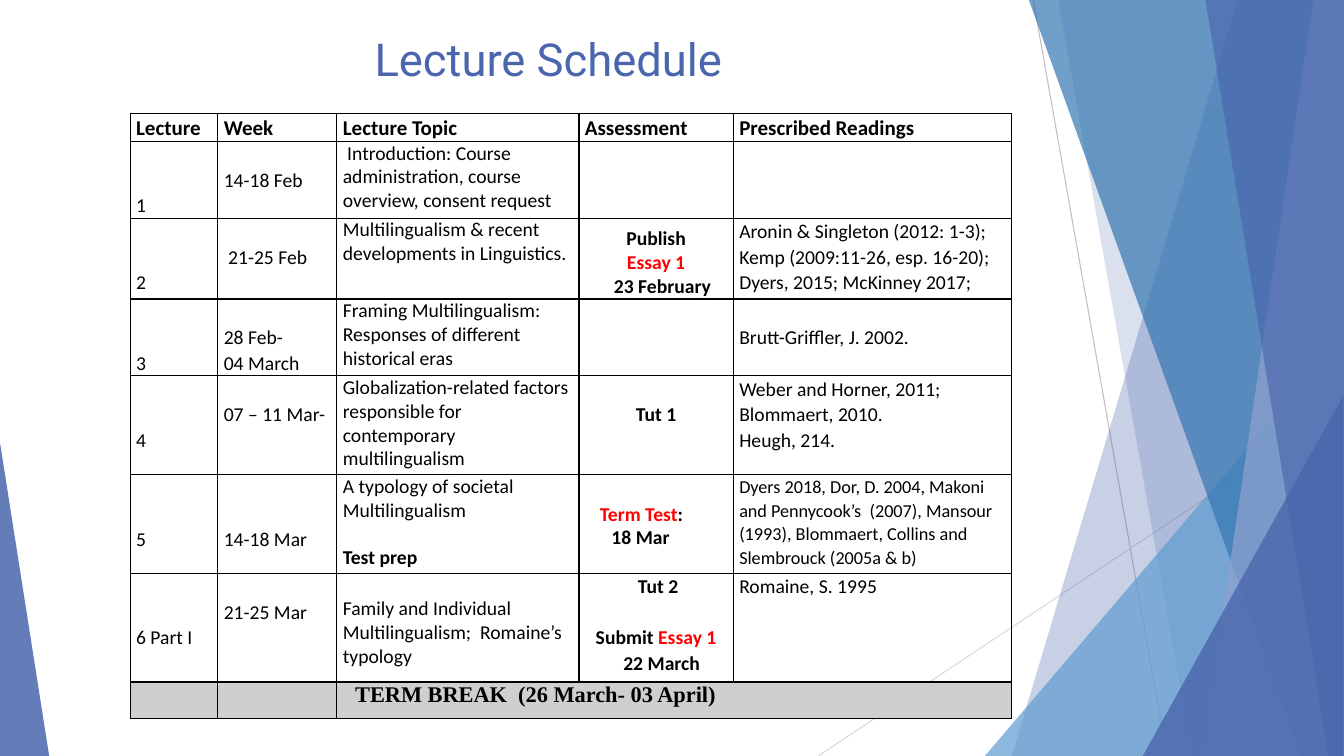
import pptx
import pptx.dml.color
import pptx.enum.shapes
import pptx.enum.text
import pptx.oxml
import pptx.oxml.ns
import pptx.util
from lxml import etree

Cm = pptx.util.Cm
Pt = pptx.util.Pt
qn = pptx.oxml.ns.qn
CENTER = pptx.enum.text.PP_ALIGN.CENTER
BLUE, BLACK, RED, GREY = "4A66AC", "000000", "FF0000", "D0CECE"
LINE = 18.3  # height in points of one 14 pt line at 1.07 spacing


def rgb(value):
    return pptx.dml.color.RGBColor.from_string(value)


def write(para, text, size=14, font="Calibri", color=BLACK, bold=False,
          align=None, spacing=1.07, indent=0, before=0):
    """Fill a paragraph; parts between asterisks turn red."""
    para.alignment = align
    para.line_spacing = spacing
    para.space_before = Pt(before)
    if indent:
        para._p.get_or_add_pPr().set("marL", str(Cm(indent)))
    for index, part in enumerate(text.split("*")):
        if part:
            span = para.add_run()
            span.text = part
            span.font.size = Pt(size)
            span.font.name = font
            span.font.bold = bold
            span.font.color.rgb = rgb(RED if index % 2 else color)


deck = pptx.Presentation()
deck.slide_width, deck.slide_height = Cm(33.87), Cm(19.05)
page = deck.slides.add_slide(deck.slide_layouts[5])
shapes = page.shapes

# Thin lines behind the facets
for x1, y1, x2, y2, color in [(26.04, 0, 29.41, 19.05, "BFBFBF"),
                              (33.87, 10.24, 20.62, 19.05, "D9D9D9")]:
    line = shapes.add_connector(pptx.enum.shapes.MSO_CONNECTOR.STRAIGHT,
                                Cm(x1), Cm(y1), Cm(x2), Cm(y2))
    line.line.color.rgb = rgb(color)
    line.line.width = Pt(0.75)
    etree.SubElement(line._element.spPr, qn("a:effectLst"))

# Facets: bands give top and bottom x of the left edge and run to the right
# page edge; triangles give left, top, width, height and apex position
facets = [
    ((31.19, 25.5), BLUE, 30),
    ((26.67, 30.05), BLUE, 20),
    ((24.82, 8.46, 9.04, 10.59, 1), "629DD1", 72),
    ((25.93, 32.79), "3477B2", 70),
    ((33.1, 30.28), "90A2CF", 70),
    ((30.38, 33.48), BLUE, 65),
    ((28.8, 9.98, 5.05, 9.07, 1), BLUE, 80),
    ((0, 11.15, 1.24, 7.9, 0), BLUE, 85),
]
for outline, color, opacity in facets:
    if len(outline) == 2:
        top_x, bottom_x = outline
        builder = shapes.build_freeform(Cm(top_x), 0)
        builder.add_line_segments([(Cm(33.87), 0), (Cm(33.87), Cm(19.05)),
                                   (Cm(bottom_x), Cm(19.05))], close=True)
        facet = builder.convert_to_shape()
    else:
        *bounds, apex = outline
        facet = shapes.add_shape(
            pptx.enum.shapes.MSO_SHAPE.ISOSCELES_TRIANGLE, *map(Cm, bounds))
        facet.adjustments[0] = apex
    facet.shadow.inherit = False
    facet.line.fill.background()
    facet.fill.solid()
    facet.fill.fore_color.rgb = rgb(color)
    paint = facet._element.spPr.find(".//" + qn("a:srgbClr"))
    etree.SubElement(paint, qn("a:alpha"), val=str(opacity * 1000))

title = shapes.title
title.left, title.top, title.width, title.height = map(Cm, (1.88, 0.69, 23.88, 1.57))
title.text_frame.vertical_anchor = pptx.enum.text.MSO_ANCHOR.MIDDLE
write(title.text_frame.paragraphs[0], "Lecture Schedule", size=32.4,
      font="Roboto", color=BLUE, align=CENTER, spacing=1)

# Each cell: space above the text in points, then (text, format) paragraphs
header = dict(size=15, bold=True)
topic = dict(spacing=1)
event = dict(bold=True, align=CENTER)
tight_event = dict(event, spacing=1)
due = dict(bold=True, spacing=1)
EMPTY = (0, [])
headings = ["Lecture", "Week", "Lecture Topic", "Assessment", "Prescribed Readings"]
schedule = [
    [(0, [(heading, header)]) for heading in headings],
    [(2 * LINE, [("1", {})]),
     (LINE, [("14-18 Feb", {})]),
     (0, [("Introduction: Course", dict(topic, indent=0.11)),
          ("administration, course overview, consent request", topic)]),
     EMPTY, EMPTY],
    [(2 * LINE, [("2", {})]),
     (LINE, [("21-25 Feb", dict(indent=0.11))]),
     (0, [("Multilingualism & recent developments in Linguistics.", topic)]),
     (6.5, [("Publish", tight_event), ("*Essay 1*", tight_event),
            ("23 February", dict(tight_event, indent=0.32))]),
     (0, [("Aronin & Singleton (2012: 1-3); Kemp (2009:11-26, esp. 16-20); "
           "Dyers, 2015; McKinney 2017;", {})])],
    [(2 * LINE, [("3", {})]),
     (LINE, [("28 Feb-", {}), ("04 March", {})]),
     (0, [("Framing Multilingualism:", topic),
          ("Responses of different historical eras", topic)]),
     EMPTY,
     (LINE, [("Brutt-Griffler, J. 2002.", {})])],
    [(2 * LINE, [("4", {})]),
     (LINE, [("07 – 11 Mar-", {})]),
     (0, [("Globalization-related factors responsible for contemporary "
           "multilingualism", topic)]),
     (LINE, [("Tut 1", event)]),
     (0, [("Weber and Horner, 2011; Blommaert, 2010.", {}), ("Heugh, 214.", {})])],
    [(2 * LINE, [("5", {})]),
     (2 * LINE, [("14-18 Mar", {})]),
     (0, [("A typology of societal", topic), ("Multilingualism", topic),
          ("Test prep", dict(topic, bold=True, before=17))]),
     (20, [("*Term Test*:", dict(due, indent=0.38)),
           ("18 Mar", dict(due, indent=0.67))]),
     (0, [("Dyers 2018, Dor, D. 2004, Makoni and Pennycook’s  (2007), Mansour "
           "(1993), Blommaert, Collins and Slembrouck (2005a & b)",
           dict(size=13))])],
    [(2 * LINE, [("6 Part I", {})]),
     (LINE, [("21-25 Mar", {})]),
     (17, [("Family and Individual", topic),
           ("Multilingualism;  Romaine’s typology", topic)]),
     (0, [("Tut 2", dict(event, indent=0.1)),
          ("Submit *Essay 1*", dict(event, before=LINE)),
          ("22 March", dict(event, indent=0.28))]),
     (0, [("Romaine, S. 1995", {})])],
    [EMPTY, EMPTY,
     (0, [("TERM BREAK  (26 March- 03 April)",
           dict(size=16, font="Times New Roman", bold=True, spacing=1, indent=0.31))]),
     EMPTY, EMPTY],
]
column_widths = [2.21, 3, 6.1, 3.89, 7.01]
row_heights = [0.69, 1.91, 2.01, 1.91, 2.49, 2.49, 2.74, 0.91]
table = shapes.add_table(len(row_heights), len(column_widths), Cm(3.28), Cm(2.87),
                         Cm(sum(column_widths)), Cm(sum(row_heights))).table
table.first_row = table.horz_banding = False
for column, width in zip(table.columns, column_widths):
    column.width = Cm(width)
for row, height in zip(table.rows, row_heights):
    row.height = Cm(height)

last = len(schedule) - 1
table.cell(last, 2).merge(table.cell(last, 4))
for row_index, entries in enumerate(schedule):
    for column_index, (top, paragraphs) in enumerate(entries):
        cell = table.cell(row_index, column_index)
        cell.margin_left = cell.margin_right = Cm(0.15)
        cell.margin_top, cell.margin_bottom = Pt(top), 0
        for side in ("lnL", "lnR", "lnT", "lnB"):
            border = etree.SubElement(cell._tc.get_or_add_tcPr(), qn("a:" + side),
                                      w=str(Pt(1)))
            ink = etree.SubElement(border, qn("a:solidFill"))
            etree.SubElement(ink, qn("a:srgbClr"), val=BLACK)
        if row_index == last:
            cell.fill.solid()
            cell.fill.fore_color.rgb = rgb(GREY)
        else:
            cell.fill.background()
        frame = cell.text_frame
        for number, (text, style) in enumerate(paragraphs):
            write(frame.add_paragraph() if number else frame.paragraphs[0],
                  text, **style)

deck.save("out.pptx")
